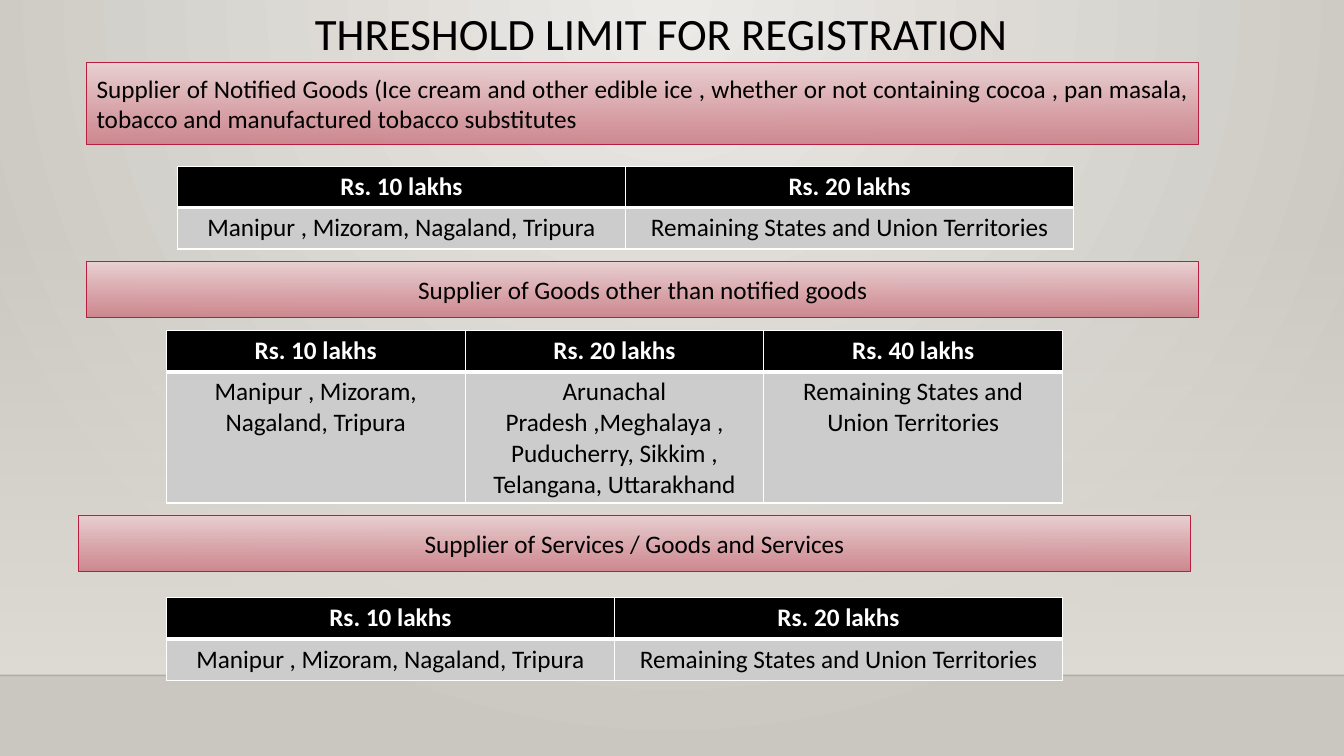
from lxml.etree import SubElement
from pptx import Presentation
from pptx.dml.color import RGBColor
from pptx.enum.shapes import MSO_CONNECTOR, MSO_SHAPE
from pptx.enum.text import MSO_ANCHOR, PP_ALIGN
from pptx.oxml.ns import qn
from pptx.util import Inches, Pt

FONT = "Calibri"
TITLE = "THRESHOLD LIMIT FOR REGISTRATION"
SMALL_STATES = "Manipur , Mizoram, Nagaland, Tripura"
REMAINING = "Remaining States and Union Territories"
TWO_LIMITS = [("Rs. 10 lakhs", SMALL_STATES), ("Rs. 20 lakhs", REMAINING)]
THREE_LIMITS = [
    ("Rs. 10 lakhs", SMALL_STATES),
    ("Rs. 20 lakhs", "Arunachal Pradesh ,Meghalaya , Puducherry, Sikkim , "
                     "Telangana, Uttarakhand"),
    ("Rs. 40 lakhs", REMAINING),
]
# banner text, alignment, (left, top, height), limits, table (left, top, body height)
SECTIONS = [
    ("Supplier of Notified Goods (Ice cream and other edible ice , whether or not "
     "containing cocoa , pan masala, tobacco and manufactured tobacco substitutes",
     PP_ALIGN.JUSTIFY, (0.86, 0.62, 0.81), TWO_LIMITS, (1.76, 1.65, 0.41)),
    ("Supplier of Goods other than notified goods",
     PP_ALIGN.CENTER, (0.86, 2.59, 0.56), THREE_LIMITS, (1.65, 3.28, 1.3)),
    ("Supplier of Services / Goods and Services",
     PP_ALIGN.CENTER, (0.78, 5.11, 0.56), TWO_LIMITS, (1.65, 5.93, 0.41)),
]
PAGE_WIDTH, PAGE_HEIGHT = 13.33, 7.5
FLOOR = 6.7
BANNER_WIDTH, TABLE_WIDTH, HEADER_HEIGHT = 11.03, 8.89, 0.41


def color(code):
    return RGBColor.from_string(code)


def set_gradient(owner, stops, circle=None):
    """Fill with (position %, colour, opacity %) stops, downwards or around a circle."""
    owner.fill.gradient()
    gradient = owner_element(owner).find(".//" + qn("a:gradFill"))
    for child in list(gradient):
        gradient.remove(child)
    stop_list = SubElement(gradient, qn("a:gsLst"))
    for position, code, opacity in stops:
        stop = SubElement(stop_list, qn("a:gs"), pos=str(position * 1000))
        tint = SubElement(stop, qn("a:srgbClr"), val=code)
        if opacity < 100:
            SubElement(tint, qn("a:alpha"), val=str(opacity * 1000))
    if circle:
        route = SubElement(gradient, qn("a:path"), path="circle")
        SubElement(route, qn("a:fillToRect"),
                   {side: str(share * 1000) for side, share in zip("ltrb", circle)})
    else:
        SubElement(gradient, qn("a:lin"), ang="5400000", scaled="0")


def owner_element(owner):
    return page.element if owner is backdrop else owner.element


def write(frame, text, size, code, align=PP_ALIGN.CENTER, bold=False):
    frame.word_wrap = True
    para = frame.paragraphs[0]
    para.text = text
    para.alignment = align
    para.font.name, para.font.size, para.font.bold = FONT, Pt(size), bold
    para.font.color.rgb = color(code)
    return para


def add_box(left, top, width, height, stops):
    box = page.shapes.add_shape(MSO_SHAPE.RECTANGLE, Inches(left), Inches(top),
                                Inches(width), Inches(height))
    box.shadow.inherit = False
    set_gradient(box, stops)
    return box


def add_banner(text, align, left, top, height):
    banner = add_box(left, top, BANNER_WIDTH, height,
                     [(0, "EAD1D3", 100), (100, "CD828A", 92)])
    banner.line.color.rgb = color("B71E42")
    banner.line.width = Pt(0.75)
    banner.text_frame.vertical_anchor = MSO_ANCHOR.MIDDLE
    write(banner.text_frame, text, 18, "000000", align)


def set_borders(cell, top, bottom):
    properties = cell._tc.get_or_add_tcPr()
    for side, points in (("L", 1), ("R", 1), ("T", top), ("B", bottom)):
        edge = SubElement(properties, qn("a:ln" + side), w=str(Pt(points)))
        solid = SubElement(edge, qn("a:solidFill"))
        SubElement(solid, qn("a:srgbClr"), val="FFFFFF")


def add_limits(limits, left, top, body_height):
    heights = (HEADER_HEIGHT, body_height)
    table = page.shapes.add_table(2, len(limits), Inches(left), Inches(top),
                                  Inches(TABLE_WIDTH), Inches(sum(heights))).table
    for row, height in zip(table.rows, heights):
        row.height = Inches(height)
    for column, texts in enumerate(limits):
        table.columns[column].width = Inches(TABLE_WIDTH / len(limits))
        for row, text in enumerate(texts):
            cell = table.cell(row, column)
            header = row == 0
            set_borders(cell, *((1, 3) if header else (3, 1)))
            cell.fill.solid()
            cell.fill.fore_color.rgb = color("000000" if header else "CCCCCC")
            write(cell.text_frame, text, 18, "FFFFFF" if header else "000000",
                  bold=header)


deck = Presentation()
deck.slide_width, deck.slide_height = Inches(PAGE_WIDTH), Inches(PAGE_HEIGHT)
page = deck.slides.add_slide(deck.slide_layouts[6])
backdrop = page.background
set_gradient(backdrop, [(0, "ECEAE7", 100), (100, "CAC7C1", 100)], (43, 0, 43, 100))

wall = add_box(0, 2.21, PAGE_WIDTH, FLOOR - 2.21,
               [(0, "DFDBD5", 0), (100, "DFDBD5", 100)])
wall.line.fill.background()

floor_line = page.shapes.add_connector(MSO_CONNECTOR.STRAIGHT, 0, Inches(FLOOR),
                                       Inches(PAGE_WIDTH), Inches(FLOOR))
floor_line.line.color.rgb = color("000001")
floor_line.line.width = Pt(1)
SubElement(floor_line.element.find(".//" + qn("a:srgbClr")), qn("a:alpha"), val="20000")
SubElement(floor_line.element.spPr, qn("a:effectLst"))

title = page.shapes.add_textbox(Inches(1.31), Inches(0.07), Inches(10.5), Inches(1.15))
write(title.text_frame, TITLE, 32, "000000").line_spacing = 0.9

for text, align, banner_place, limits, table_place in SECTIONS:
    add_banner(text, align, *banner_place)
    add_limits(limits, *table_place)

deck.save("out.pptx")
